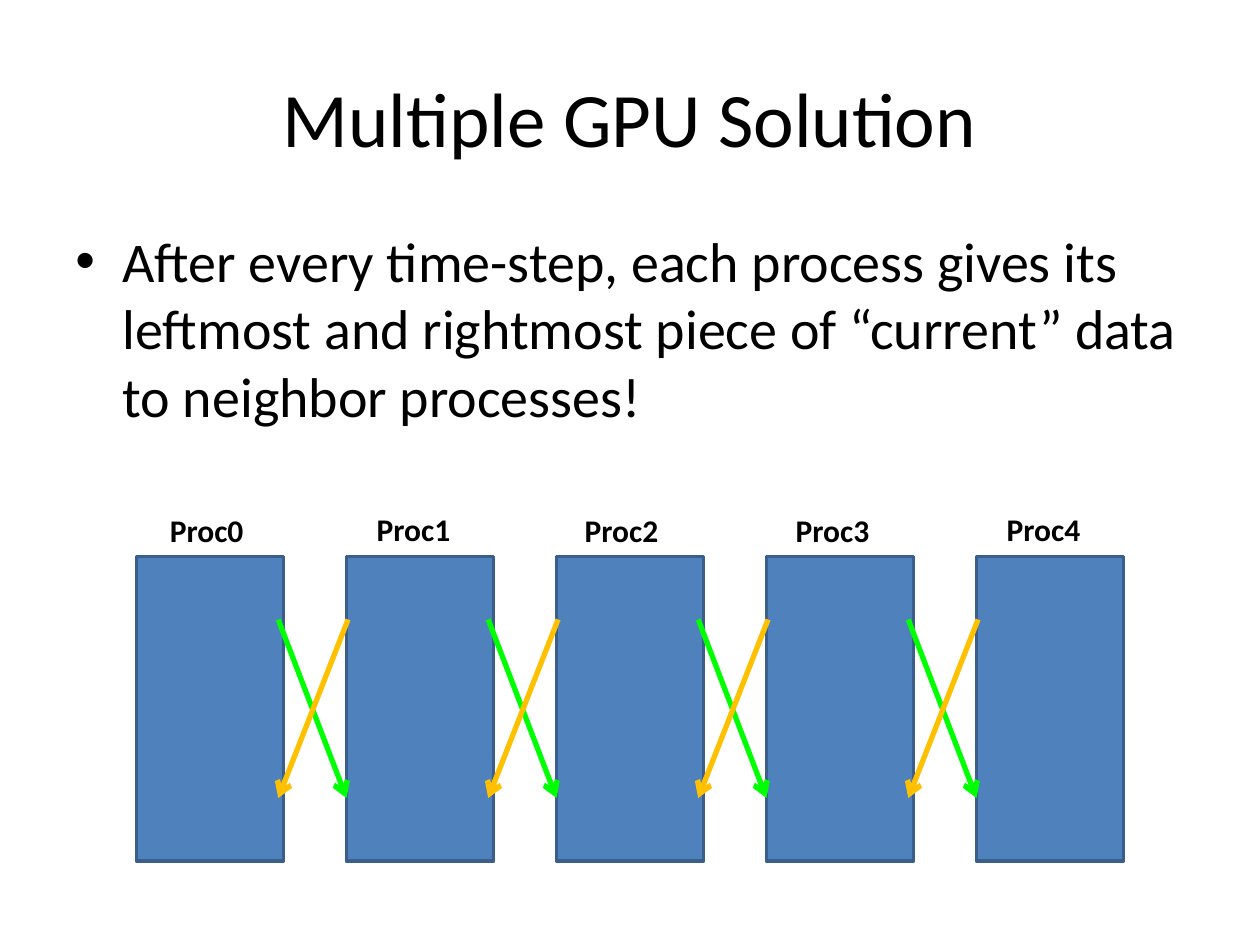
from lxml import etree
from pptx import Presentation
from pptx.dml.color import RGBColor
from pptx.enum.shapes import MSO_CONNECTOR, MSO_SHAPE
from pptx.enum.text import MSO_ANCHOR, PP_ALIGN
from pptx.oxml.ns import qn
from pptx.util import Inches, Pt

RECTANGLE = MSO_SHAPE.RECTANGLE
STRAIGHT = MSO_CONNECTOR.STRAIGHT
LEFT, CENTER = PP_ALIGN.LEFT, PP_ALIGN.CENTER
TOP, MIDDLE = MSO_ANCHOR.TOP, MSO_ANCHOR.MIDDLE

# Grid of 120 columns by 90 rows: twelve units to the inch
UNIT = Inches(1) / 12


def grid(*units):
    return [round(unit * UNIT) for unit in units]


def color(hex_string):
    return RGBColor.from_string(hex_string)


class SlideBuilder:
    font = "Calibri"
    ink = "000000"
    box_fill, box_line = "4F81BD", "3A5F8C"

    def __init__(self, slide):
        self.slide = slide

    def text(self, content, left, top, width, height, size, bold=False,
             align=LEFT, anchor=TOP, wrap=True):
        box = self.slide.shapes.add_textbox(*grid(left, top, width, height))
        frame = box.text_frame
        frame.text = content
        frame.word_wrap = wrap
        frame.vertical_anchor = anchor
        paragraph = frame.paragraphs[0]
        paragraph.alignment = align
        font = paragraph.runs[0].font
        font.name, font.size, font.bold = self.font, Pt(size), bold
        font.color.rgb = color(self.ink)
        return paragraph

    def bullet(self, content, left, top, width, height, size):
        paragraph = self.text(content, left, top, width, height, size)
        properties = paragraph._p.get_or_add_pPr()
        indent = Inches(0.375)
        properties.set("marL", str(indent))
        properties.set("indent", str(-indent))
        spacing = etree.SubElement(properties, qn("a:spcBef"))
        etree.SubElement(spacing, qn("a:spcPct"), val="20000")
        etree.SubElement(properties, qn("a:buFont"), typeface="Arial")
        etree.SubElement(properties, qn("a:buChar"), char="•")

    def box(self, left, top, width, height):
        box = self.slide.shapes.add_shape(
            RECTANGLE, *grid(left, top, width, height))
        box.shadow.inherit = False
        box.fill.solid()
        box.fill.fore_color.rgb = color(self.box_fill)
        box.line.color.rgb = color(self.box_line)
        box.line.width = Pt(2)

    def arrow(self, start_x, start_y, end_x, end_y, stroke):
        arrow = self.slide.shapes.add_connector(
            STRAIGHT, *grid(start_x, start_y, end_x, end_y))
        arrow.line.color.rgb = color(stroke)
        arrow.line.width = Pt(3)
        etree.SubElement(arrow.line._get_or_add_ln(), qn("a:tailEnd"), type="arrow")
        etree.SubElement(arrow._element.spPr, qn("a:effectLst"))


def main():
    presentation = Presentation()
    presentation.slide_width, presentation.slide_height = grid(120, 90)
    blank = presentation.slide_layouts[6]
    builder = SlideBuilder(presentation.slides.add_slide(blank))

    # Title and statement
    builder.text("Multiple GPU Solution", 6, 3.6, 108, 15, 44,
                 align=CENTER, anchor=MIDDLE)
    builder.bullet("After every time-step, each process gives its leftmost and "
                   "rightmost piece of “current” data to neighbor processes!",
                   6, 21, 108, 59.4, 32)

    # Processes, evenly spaced
    first_left, pitch = 13, 20
    process_lefts = [first_left + pitch * index for index in range(5)]
    for left in process_lefts:
        builder.box(left, 53, 14, 29)

    # Process names, each placed by hand above its box
    name_places = [(15, 48.1), (34.7, 48), (54.5, 48.1), (74.6, 48.1), (94.7, 48)]
    for index, (left, top) in enumerate(name_places):
        builder.text(f"Proc{index}", left, top, 10.8, 4.8, 18,
                     bold=True, wrap=False)

    # Data exchanged between neighbors
    send_y, receive_y = 59, 76
    for left, neighbor in zip(process_lefts, process_lefts[1:]):
        right_edge = left + 13.5
        builder.arrow(right_edge, send_y, neighbor, receive_y, "00FF00")
        builder.arrow(neighbor + 0.15, send_y, right_edge, receive_y, "FFC000")

    presentation.save("out.pptx")


if __name__ == "__main__":
    main()
